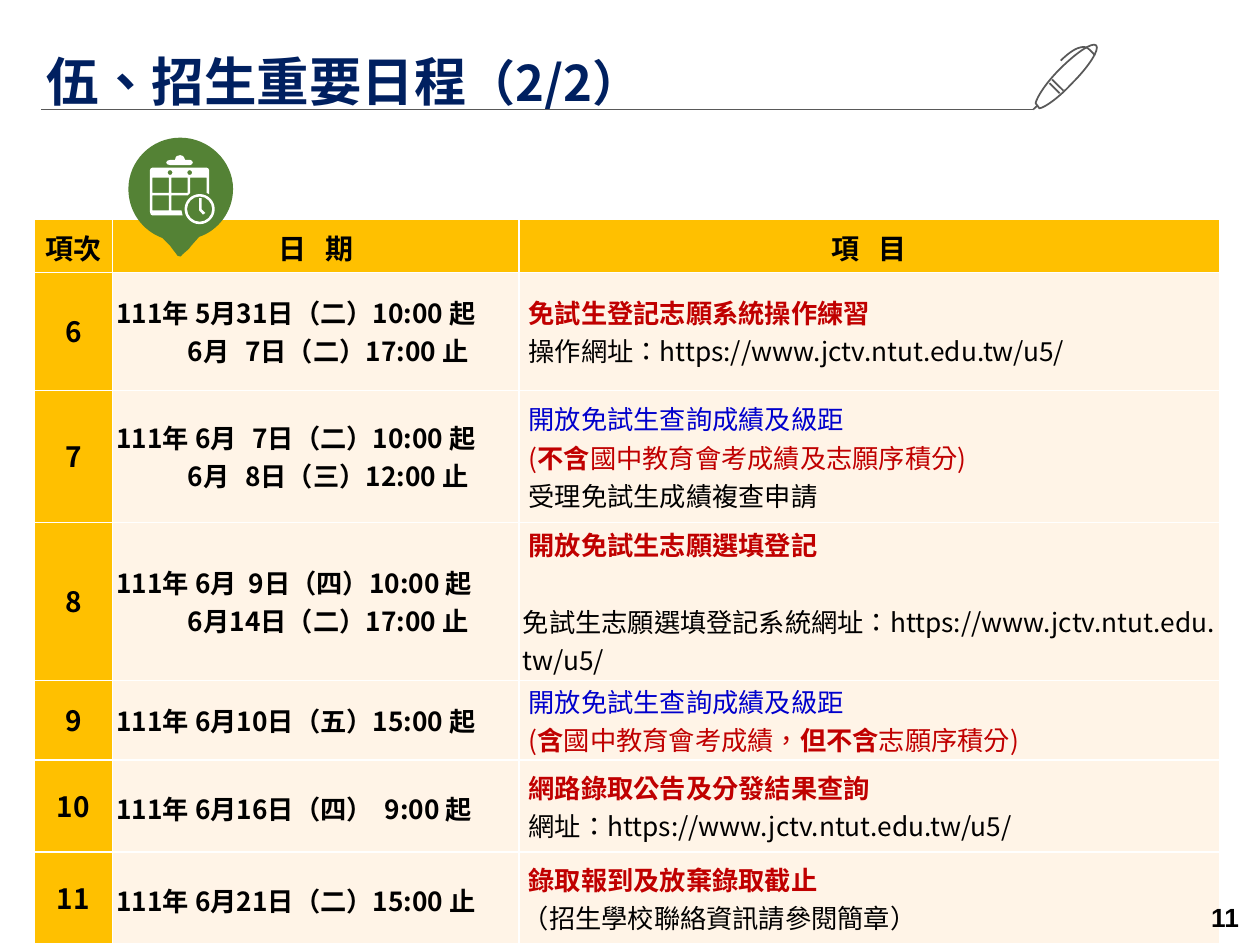
"""Build the admission schedule slide with its date table, pen and calendar pin."""
from lxml import etree
from pptx import Presentation
from pptx.dml.color import RGBColor
from pptx.enum.lang import MSO_LANGUAGE_ID
from pptx.enum.shapes import MSO_CONNECTOR
from pptx.enum.text import MSO_ANCHOR, MSO_AUTO_SIZE, PP_ALIGN
from pptx.oxml.ns import qn
from pptx.util import Pt

TOP, MIDDLE = MSO_ANCHOR.TOP, MSO_ANCHOR.MIDDLE
LEFT, CENTER, RIGHT = PP_ALIGN.LEFT, PP_ALIGN.CENTER, PP_ALIGN.RIGHT
STRAIGHT = MSO_CONNECTOR.STRAIGHT
TAIWAN = MSO_LANGUAGE_ID.TRADITIONAL_CHINESE
NO_AUTOFIT = MSO_AUTO_SIZE.NONE
FONT = "Noto Sans CJK SC"
AMBER, CREAM, WHITE, GREY, GREEN = "FFC000", "FFF4E7", "FFFFFF", "595959", "548235"

STYLES = {
    "title": (30, "002060", True),
    "title part": (28, "002060", True),
    "head": (16, "000000", True),
    "date": (15, "000000", True),
    "gap": (13, "000000", True),
    "plain": (15, "000000", False),
    "blue": (15, "0000CC", False),
    "red": (15, "C00000", False),
    "strong": (15, "C00000", True),
}
TITLE = [("伍、招生重要日程", "title"), ("（2/2）", "title part")]
HEADINGS = ["項次", "日   期", "項   目"]
INDENT, GAP = (" ", "plain"), ("   ", "gap")
QUERY = ("開放免試生查詢成績及級距\n", "blue")
SITE = "https://www.jctv.ntut.edu.tw/u5/"
EVENTS = [
    {"number": "6",
     "date": [("111年 5月31日（二）10:00 起\n            6月", "date"), GAP,
              ("7日（二）17:00 止", "date")],
     "items": [[INDENT, ("免試生登記志願系統操作練習", "strong")],
               [(" 操作網址：" + SITE, "plain")]]},
    {"number": "7",
     "date": [("111年 6月", "date"), GAP, ("7日（二）10:00 起\n            6月", "date"), GAP,
              ("8日（三）12:00 止", "date")],
     "items": [[INDENT, QUERY, (" (", "red"), ("不含", "strong"),
                ("國中教育會考成績及志願序積分)", "red")],
               [(" 受理免試生成績複查申請", "plain")]],
     "item leading": 22},
    {"number": "8",
     "date": [("111年 6月  9日（四）10:00 起\n            6月14日（二）17:00 止", "date")],
     "items": [[INDENT, ("開放免試生志願選填登記", "strong")],
               [(" 免試生志願選填登記系統網址：" + SITE, "plain")]],
     "item leading": 22},
    {"number": "9",
     "date": [("111年 6月10日（五）15:00 起", "date")],
     "items": [[INDENT, QUERY, (" (", "red"), ("含", "strong"), ("國中教育會考成績，", "red"),
                ("但不含", "strong"), ("志願序積分)", "red")]],
     "date space": 3},
    {"number": "10",
     "date": [("111年 6月16日（四）  9:00 起", "date")],
     "items": [[INDENT, ("網路錄取公告及分發結果查詢", "strong")],
               [(" 網址：" + SITE, "plain")]],
     "date space": 3, "date leading": 24},
    {"number": "11",
     "date": [("111年 6月21日（二）15:00 止", "date")],
     "items": [[INDENT, ("錄取報到及放棄錄取截止", "strong")],
               [("（招生學校聯絡資訊請參閱簡章）", "plain")]],
     "date space": 3, "date leading": 24},
]
COLUMN_WIDTHS = [44.7, 232.2, 400.6]
ROW_HEIGHTS = [30.3, 52.6, 75.6, 75.6, 42.5, 52.6, 52.6]


def rgb(value):
    return RGBColor.from_string(value)


def style_run(run, style, font=FONT):
    size, color, bold = STYLES[style]
    run.font.size, run.font.bold, run.font.name = Pt(size), bold, font
    run.font.color.rgb = rgb(color)
    run.font.language_id = TAIWAN
    etree.SubElement(run.font._element, qn("a:ea")).set("typeface", font)


def write(paragraph, parts, align=LEFT, leading=None, space=0):
    paragraph.alignment = align
    paragraph.space_before = paragraph.space_after = Pt(space)
    if leading:
        paragraph.line_spacing = Pt(leading)
    for text, style in parts:
        for index, line in enumerate(text.split("\n")):
            if index:
                paragraph.add_line_break()
            if line:
                run = paragraph.add_run()
                run.text = line
                style_run(run, style)


def fill_cell(cell, color, paragraphs, **layout):
    cell.vertical_anchor = MIDDLE
    cell.margin_left = cell.margin_right = Pt(2.3)
    cell.margin_top = cell.margin_bottom = Pt(1.05)
    for side in ("a:lnL", "a:lnR", "a:lnT", "a:lnB"):
        border = etree.SubElement(cell._tc.get_or_add_tcPr(), qn(side), w=str(Pt(1)))
        solid = etree.SubElement(border, qn("a:solidFill"))
        etree.SubElement(solid, qn("a:srgbClr"), val=WHITE)
    cell.fill.solid()
    cell.fill.fore_color.rgb = rgb(color)
    frame = cell.text_frame
    for index, parts in enumerate(paragraphs):
        write(frame.add_paragraph() if index else frame.paragraphs[0], parts, **layout)


def circle(x, y, r):
    k = 0.55 * r
    return [(x, y - r), ((x + k, y - r), (x + r, y - k), (x + r, y)),
            ((x + r, y + k), (x + k, y + r), (x, y + r)),
            ((x - k, y + r), (x - r, y + k), (x - r, y)),
            ((x - r, y - k), (x - k, y - r), (x, y - r))]


def box(left, top, right, bottom):
    return [(left, top), (right, top), (right, bottom), (left, bottom)]


def draw(shapes, closed, opened=(), fill=None, line=None):
    """Draw contours whose steps are points, or triples of points for Bézier curves."""
    builder, curved = None, []
    for contour, close in [(c, True) for c in closed] + [(c, False) for c in opened]:
        start, *steps = contour
        points = []
        for step in steps:
            curved.append(isinstance(step[0], tuple))
            points += step if curved[-1] else [step]
        origin = Pt(start[0]), Pt(start[1])
        if builder is None:
            builder = shapes.build_freeform(*origin)
        else:
            builder.move_to(*origin)
        builder.add_line_segments([(Pt(x), Pt(y)) for x, y in points], close=close)
    outline = builder.convert_to_shape()
    segments = outline._element.iter(qn("a:lnTo"))
    segments = iter(list(segments))
    for is_curve in curved:
        segment = next(segments)
        if is_curve:
            segment.addprevious(etree.Element(qn("a:cubicBezTo")))
            bend = segment.getprevious()
            for part in (segment, next(segments), next(segments)):
                bend.append(part[0])
                part.getparent().remove(part)
    outline.shadow.inherit = False
    if fill:
        outline.fill.solid()
        outline.fill.fore_color.rgb = rgb(fill)
        outline.line.fill.background()
    else:
        outline.fill.background()
        outline.line.color.rgb = rgb(line)
        outline.line.width = Pt(1)


def add_schedule(slide):
    table = slide.shapes.add_table(len(ROW_HEIGHTS), len(COLUMN_WIDTHS), Pt(19.6), Pt(125.5),
                                   Pt(sum(COLUMN_WIDTHS)), Pt(sum(ROW_HEIGHTS))).table
    for column, width in zip(table.columns, COLUMN_WIDTHS):
        column.width = Pt(width)
    for row, height in zip(table.rows, ROW_HEIGHTS):
        row.height = Pt(height)
    for column, heading in enumerate(HEADINGS):
        fill_cell(table.cell(0, column), AMBER, [[(heading, "head")]],
                  align=CENTER, leading=24, space=6)
    for row, event in enumerate(EVENTS, 1):
        fill_cell(table.cell(row, 0), AMBER, [[(event["number"], "head")]],
                  align=CENTER, leading=22, space=6)
        fill_cell(table.cell(row, 1), CREAM, [event["date"]],
                  leading=event.get("date leading"), space=event.get("date space", 0))
        fill_cell(table.cell(row, 2), CREAM, event["items"], leading=event.get("item leading"))


def add_heading(slide):
    title = slide.shapes.title
    title.left, title.top, title.width, title.height = Pt(19.6), Pt(28.5), Pt(440), Pt(34.6)
    title.text_frame.vertical_anchor = TOP
    title.text_frame.auto_size = NO_AUTOFIT
    write(title.text_frame.paragraphs[0], TITLE)
    title.text_frame.paragraphs[0].line_spacing = 0.9
    rule = slide.shapes.add_connector(STRAIGHT, Pt(23.6), Pt(62.6), Pt(590.4), Pt(62.6))
    rule.line.color.rgb, rule.line.width = rgb(GREY), Pt(0.5)
    etree.SubElement(rule._element.spPr, qn("a:effectLst"))


def add_pen(slide):
    barrel = [(626.4, 25.9), ((624.2, 23.8), (614.9, 30.2), (605.5, 39.6)),
              ((597.6, 47.5), (592.6, 55.4), (591.8, 59)), (594, 61.9),
              ((597.6, 61.2), (605.5, 55.4), (612.7, 47.5)),
              ((622.1, 38.2), (628.6, 28.1), (626.4, 25.9))]
    clip = [(625.7, 31.7), ((625.7, 31.7), (623.5, 28.8), (621.4, 27.4)),
            ((621.4, 27.4), (617, 23.8), (606.2, 34.6))]
    bands = [[(605.5, 53.3), (599.8, 47.5)], [(601.2, 45.4), (607.7, 51.8)]]
    tip = [(592.6, 60.5), (590.4, 62.6)]
    draw(slide.shapes, [barrel], [*bands, tip, clip], line=GREY)


def add_calendar_pin(slide):
    shapes = slide.shapes.add_group_shape().shapes
    pin = [(103, 78.7), ((119.5, 78.7), (133.2, 92.2), (133.2, 108)),
           ((133.2, 121), (124.6, 131.8), (113.8, 135.4)), (109.4, 140.4),
           ((108, 142.6), (105.8, 144), (104.4, 145.4)),
           ((103.7, 146.9), (103, 146.9), (101.5, 146.2)),
           ((100.1, 144), (98.6, 142.6), (97.2, 140.4)), (92.9, 136.1),
           ((81.4, 131.8), (73.4, 121), (73.4, 108)), ((73.4, 92.2), (86.4, 78.7), (103, 78.7))]
    draw(shapes, [pin], fill=GREEN)
    clip = [(95, 92.9), ((95, 93.6), (95.8, 94.3), (97.2, 94.3)), (108.7, 94.3),
            ((109.4, 94.3), (110.2, 93.6), (110.2, 92.9)),
            ((110.2, 92.2), (109.4, 91.4), (108.7, 91.4)), (105.8, 91.4),
            ((105.1, 89.3), (104.4, 88.6), (103, 88.6)),
            ((101.5, 88.6), (100.1, 89.3), (100.1, 91.4)), (97.2, 91.4),
            ((95.8, 91.4), (95, 92.2), (95, 92.9))]
    page = [(87.1, 95.8), (118.1, 95.8), ((118.8, 95.8), (119.5, 96.5), (119.5, 97.2)),
            (119.5, 110.9), (118.1, 110.2), (118.1, 101.5), (108.7, 101.5), (108.7, 110.2),
            (107.3, 111.6), (97.9, 111.6), (97.9, 120.2), (103.7, 120.2), (104.4, 123.1),
            (87.1, 123.1), ((86.4, 123.1), (85.7, 122.4), (85.7, 121)), (85.7, 97.2),
            ((85.7, 96.5), (86.4, 95.8), (87.1, 95.8))]
    days = [box(x, y, x + 9.4, y + 8.7) for x, y in ((87.1, 101.5), (97.9, 101.5), (87.1, 111.6))]
    rings = [circle(x, 98.6, 1.4) for x in (97.2, 108.4)]
    clock = [circle(114.1, 119.5, radius) for radius in (8.6, 7.2)]
    hands = [(113.8, 113.2), (115.2, 113.2), (115.2, 119.5), (117.4, 121.7), (116, 122.6),
             (113.8, 120.2)]
    draw(shapes, [clip, page, *days, *rings, *clock, hands], fill=WHITE)


def add_page_number(slide):
    frame = slide.shapes.add_textbox(Pt(553), Pt(513.4), Pt(162), Pt(21.6)).text_frame
    frame.word_wrap, frame.vertical_anchor = True, MIDDLE
    frame.text = "11"
    frame.paragraphs[0].alignment = RIGHT
    style_run(frame.paragraphs[0].runs[0], "date", "Arial")


deck = Presentation()
deck.slide_width, deck.slide_height = Pt(720), Pt(540)
schedule_slide = deck.slides.add_slide(deck.slide_layouts[5])
for add_part in (add_schedule, add_page_number, add_heading, add_pen, add_calendar_pin):
    add_part(schedule_slide)
deck.save("out.pptx")
